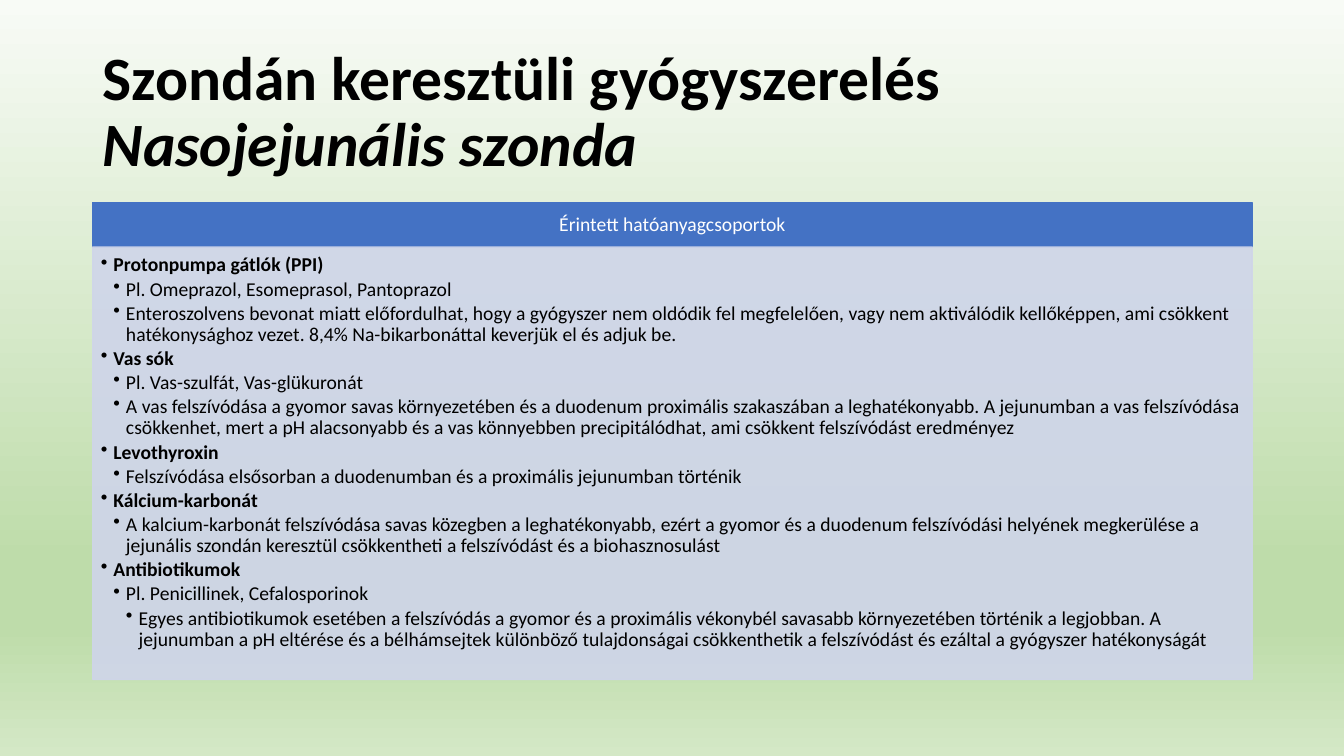
from lxml import etree
from pptx import Presentation
from pptx.dml.color import RGBColor
from pptx.enum.shapes import MSO_SHAPE
from pptx.enum.text import MSO_ANCHOR, PP_ALIGN
from pptx.oxml.ns import qn
from pptx.util import Inches, Pt

RECT = MSO_SHAPE.RECTANGLE
TOP = MSO_ANCHOR.TOP
MIDDLE = MSO_ANCHOR.MIDDLE
LEFT = PP_ALIGN.LEFT
CENTER = PP_ALIGN.CENTER

BLACK = RGBColor(0x00, 0x00, 0x00)
WHITE = RGBColor(0xFF, 0xFF, 0xFF)
BLUE = RGBColor(0x44, 0x72, 0xC4)
PALE = RGBColor(0xCF, 0xD5, 0xEA)
MINT = RGBColor(0xF8, 0xFB, 0xF6)
GREEN = RGBColor(0xBE, 0xDC, 0xAA)
LIGHT = RGBColor(0xD4, 0xE8, 0xC6)

STOPS = [(0, MINT), (74, GREEN), (83, GREEN), (100, LIGHT)]
FONT = "Calibri"
EDGE = 0.92
WIDTH = 11.5
STEP = 0.125

DRUGS = [
    (1, "Protonpumpa gátlók (PPI)"),
    (2, "Pl. Omeprazol, Esomeprasol, Pantoprazol"),
    (2, "Enteroszolvens bevonat miatt előfordulhat, hogy a gyógyszer nem oldódik fel "
        "megfelelően, vagy nem aktiválódik kellőképpen, ami csökkent hatékonysághoz vezet. "
        "8,4% Na-bikarbonáttal keverjük el és adjuk be."),
    (1, "Vas sók"),
    (2, "Pl. Vas-szulfát, Vas-glükuronát"),
    (2, "A vas felszívódása a gyomor savas környezetében és a duodenum proximális "
        "szakaszában a leghatékonyabb. A jejunumban a vas felszívódása csökkenhet, mert a pH "
        "alacsonyabb és a vas könnyebben precipitálódhat, ami csökkent felszívódást eredményez"),
    (1, "Levothyroxin"),
    (2, "Felszívódása elsősorban a duodenumban és a proximális jejunumban történik"),
    (1, "Kálcium-karbonát"),
    (2, "A kalcium-karbonát felszívódása savas közegben a leghatékonyabb, ezért a gyomor és "
        "a duodenum felszívódási helyének megkerülése a jejunális szondán keresztül "
        "csökkentheti a felszívódást és a biohasznosulást"),
    (1, "Antibiotikumok"),
    (2, "Pl. Penicillinek, Cefalosporinok"),
    (3, "Egyes antibiotikumok esetében a felszívódás a gyomor és a proximális vékonybél "
        "savasabb környezetében történik a legjobban. A jejunumban a pH eltérése és a "
        "bélhámsejtek különböző tulajdonságai csökkenthetik a felszívódást és ezáltal a "
        "gyógyszer hatékonyságát"),
]


def paint_back(slide):
    fill = slide.background.fill
    fill.gradient()
    fill.gradient_angle = 270
    stops = next(slide.element.iter(qn("a:gsLst")))
    for stop in list(stops):
        stops.remove(stop)
    for place, color in STOPS:
        stop = etree.SubElement(stops, qn("a:gs"), pos=str(place * 1000))
        etree.SubElement(stop, qn("a:srgbClr"), val=str(color))


def set_frame(frame, anchor, insets):
    frame.word_wrap = True
    frame.vertical_anchor = anchor
    (frame.margin_left, frame.margin_top,
     frame.margin_right, frame.margin_bottom) = map(Inches, insets)


def style(para, size, color, bold=False, align=LEFT, after=0):
    para.alignment = align
    para.line_spacing = 0.9
    para.space_after = Pt(after)
    para.font.name = FONT
    para.font.size = Pt(size)
    para.font.bold = bold
    para.font.color.rgb = color


def add_title(slide):
    box = slide.shapes.add_textbox(Inches(EDGE), Inches(0.4), Inches(WIDTH), Inches(1.45))
    set_frame(box.text_frame, MIDDLE, (0.1, 0.05, 0.1, 0.05))
    para = box.text_frame.paragraphs[0]
    style(para, 44, BLACK, bold=True)
    para.add_run().text = "Szondán keresztüli gyógyszerelés"
    para.add_line_break()
    run = para.add_run()
    run.text = "Nasojejunális szonda"
    run.font.italic = True


def add_panel(slide, top, height, color, anchor, insets, alpha=100):
    panel = slide.shapes.add_shape(
        RECT, Inches(EDGE), Inches(top), Inches(WIDTH), Inches(height))
    panel.shadow.inherit = False
    panel.fill.solid()
    panel.fill.fore_color.rgb = color
    panel.line.color.rgb = color
    panel.line.width = Pt(1)
    if alpha < 100:
        for tint in panel.element.spPr.iter(qn("a:srgbClr")):
            etree.SubElement(tint, qn("a:alpha"), val=str(alpha * 1000))
    set_frame(panel.text_frame, anchor, insets)
    return panel.text_frame


def add_bullet(para, level, text):
    para.text = text
    para.level = level
    style(para, 14, BLACK, bold=level == 1, after=2.1)
    props = para._p.get_or_add_pPr()
    props.set("marL", str(Inches(STEP * level)))
    props.set("indent", str(-Inches(STEP)))
    mark = etree.Element(qn("a:buChar"), char="•")
    props.insert(list(props).index(props.find(qn("a:defRPr"))), mark)


def main():
    deck = Presentation()
    deck.slide_width = Inches(13.33)
    deck.slide_height = Inches(7.5)
    slide = deck.slides.add_slide(deck.slide_layouts[6])
    paint_back(slide)
    add_title(slide)

    head = add_panel(slide, 2.01, 0.44, BLUE, MIDDLE, (0.11, 0.06, 0.11, 0.06))
    head.text = "Érintett hatóanyagcsoportok"
    style(head.paragraphs[0], 14, WHITE, align=CENTER, after=4.9)

    body = add_panel(slide, 2.45, 4.29, PALE, TOP, (0.08, 0.08, 0.11, 0.12), alpha=90)
    for index, (level, text) in enumerate(DRUGS):
        para = body.add_paragraph() if index else body.paragraphs[0]
        add_bullet(para, level, text)
    deck.save("out.pptx")


if __name__ == "__main__":
    main()
